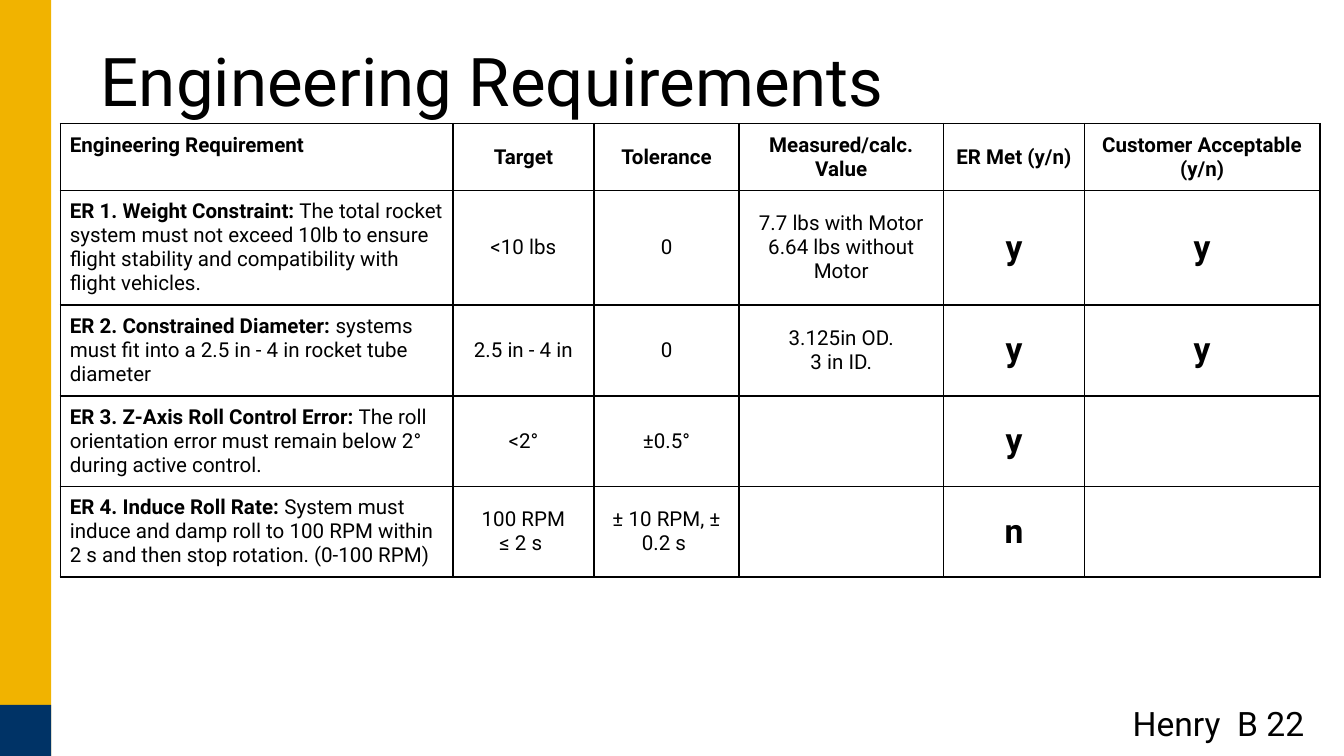
from lxml import etree
from pptx import Presentation
from pptx.dml.color import RGBColor
from pptx.enum.shapes import MSO_SHAPE
from pptx.enum.text import MSO_ANCHOR, MSO_AUTO_SIZE, PP_ALIGN
from pptx.oxml.ns import qn
from pptx.util import Inches, Pt

RECTANGLE = MSO_SHAPE.RECTANGLE
TOP, MIDDLE = MSO_ANCHOR.TOP, MSO_ANCHOR.MIDDLE
LEFT, CENTER = PP_ALIGN.LEFT, PP_ALIGN.CENTER
NO_AUTOFIT = MSO_AUTO_SIZE.NONE

GOLD = RGBColor(0xF1, 0xB3, 0x00)
NAVY = RGBColor(0x00, 0x33, 0x66)
BLACK = RGBColor(0x00, 0x00, 0x00)

FONT = "Roboto"
SLIDE_WIDTH = 10
SLIDE_HEIGHT = SLIDE_WIDTH * 9 / 16
BAND_WIDTH = 0.38
COLUMN_WIDTHS = [2.92, 1.05, 1.08, 1.52, 1.05, 1.75]
ROW_HEIGHTS = [0.49, 0.85, 0.67, 0.67, 0.67]
MET_COLUMN = 4

HEADERS = ["Engineering Requirement", "Target", "Tolerance",
           "Measured/calc. Value", "ER Met (y/n)", "Customer Acceptable (y/n)"]
REQUIREMENTS = [
    [("ER 1. Weight Constraint:",
      " The total rocket system must not exceed 10lb to ensure flight stability "
      "and compatibility with flight vehicles."),
     "<10 lbs", "0", "7.7 lbs with Motor\n6.64 lbs without Motor", "y", "y"],
    [("ER 2. Constrained Diameter: ",
      "systems must fit into a 2.5 in - 4 in rocket tube diameter"),
     "2.5 in - 4 in", "0", "3.125in OD.\n3 in ID.", "y", "y"],
    [("ER 3. Z-Axis Roll Control Error:",
      " The roll orientation error must remain below 2° during active control."),
     "<2°", "±0.5°", "", "y", ""],
    [("ER 4. Induce Roll Rate:",
      " System must induce and damp roll to 100 RPM within 2 s and then stop "
      "rotation. (0-100 RPM)"),
     "100 RPM\n≤ 2 s ", "± 10 RPM, ± 0.2 s ", "", "n", ""],
]


def apply_format(target, values):
    for name, value in values.items():
        setattr(target, name, value)


def margins(horizontal, vertical):
    return {"margin_left": Inches(horizontal), "margin_right": Inches(horizontal),
            "margin_top": Inches(vertical), "margin_bottom": Inches(vertical)}


def add_run(paragraph, text, size, bold=False):
    run = paragraph.add_run()
    run.text = text
    apply_format(run.font, {"name": FONT, "size": Pt(size), "bold": bold})
    run.font.color.rgb = BLACK


def add_side_band(slide, left, top, width, height):
    blocks = [(top, height, GOLD), (top + height - width, width, NAVY)]
    for block_top, block_height, color in blocks:
        shape = slide.shapes.add_shape(RECTANGLE, Inches(left), Inches(block_top),
                                       Inches(width), Inches(block_height))
        shape.shadow.inherit = False
        shape.fill.solid()
        shape.fill.fore_color.rgb = color
        shape.line.fill.background()


def add_title(slide, left, top, width, height):
    title = slide.shapes.title
    apply_format(title, {"left": Inches(left), "top": Inches(top),
                         "width": Inches(width), "height": Inches(height)})
    apply_format(title.text_frame, {"vertical_anchor": MIDDLE, "word_wrap": True,
                                    "auto_size": NO_AUTOFIT, **margins(0.07, 0.04)})
    paragraph = title.text_frame.paragraphs[0]
    apply_format(paragraph, {"alignment": LEFT, "line_spacing": 0.9})
    add_run(paragraph, "Engineering Requirements", 36)


def add_borders(cell):
    properties = cell._tc.get_or_add_tcPr()
    for side in ("a:lnL", "a:lnR", "a:lnT", "a:lnB"):
        line = etree.SubElement(properties, qn(side), w=str(Pt(1)))
        fill = etree.SubElement(line, qn("a:solidFill"))
        etree.SubElement(fill, qn("a:srgbClr"), val=str(BLACK))


def fill_cell(cell, content, row, column):
    is_header, is_name = row == 0, column == 0
    add_borders(cell)
    cell.fill.background()
    apply_format(cell, {"vertical_anchor": TOP if is_name else MIDDLE,
                        **margins(0.07, 0.07)})
    frame = cell.text_frame
    if isinstance(content, tuple):
        label, description = content
        add_run(frame.paragraphs[0], label, 11, True)
        add_run(frame.paragraphs[0], description, 11)
    elif content:
        is_answer = not is_header and column >= MET_COLUMN
        for index, text in enumerate(content.split("\n")):
            paragraph = frame.add_paragraph() if index else frame.paragraphs[0]
            paragraph.alignment = LEFT if is_name else CENTER
            add_run(paragraph, text, 18 if is_answer else 11, is_header or is_answer)
    if is_name:
        apply_format(frame.paragraphs[0], {"space_before": Pt(10 if row < 2 else 0),
                                           "space_after": Pt(6)})


def add_requirements_table(slide, left, top):
    rows = [HEADERS] + REQUIREMENTS
    table = slide.shapes.add_table(
        len(rows), len(HEADERS), Inches(left), Inches(top),
        Inches(sum(COLUMN_WIDTHS)), Inches(sum(ROW_HEIGHTS))).table
    apply_format(table, {"first_row": False, "horz_banding": False})
    for column, width in zip(table.columns, COLUMN_WIDTHS):
        column.width = Inches(width)
    for row, height in zip(table.rows, ROW_HEIGHTS):
        row.height = Inches(height)
    for row_index, contents in enumerate(rows):
        for column_index, content in enumerate(contents):
            fill_cell(table.cell(row_index, column_index), content,
                      row_index, column_index)


def add_presenter(slide, left, top, width, height):
    box = slide.shapes.add_textbox(Inches(left), Inches(top),
                                   Inches(width), Inches(height))
    apply_format(box.text_frame, {"word_wrap": True, **margins(0.1, 0.1)})
    add_run(box.text_frame.paragraphs[0], "Henry  B 22", 18)


def main():
    presentation = Presentation()
    apply_format(presentation, {"slide_width": Inches(SLIDE_WIDTH),
                                "slide_height": Inches(SLIDE_HEIGHT)})
    slide = presentation.slides.add_slide(presentation.slide_layouts[5])
    add_side_band(slide, 0, 0, BAND_WIDTH, SLIDE_HEIGHT)
    add_title(slide, 0.68, 0.34, 9.13, 0.58)
    add_requirements_table(slide, 0.45, 0.92)
    add_presenter(slide, 8.33, 5.13, 1.67, 0.38)
    presentation.save("out.pptx")


if __name__ == "__main__":
    main()
